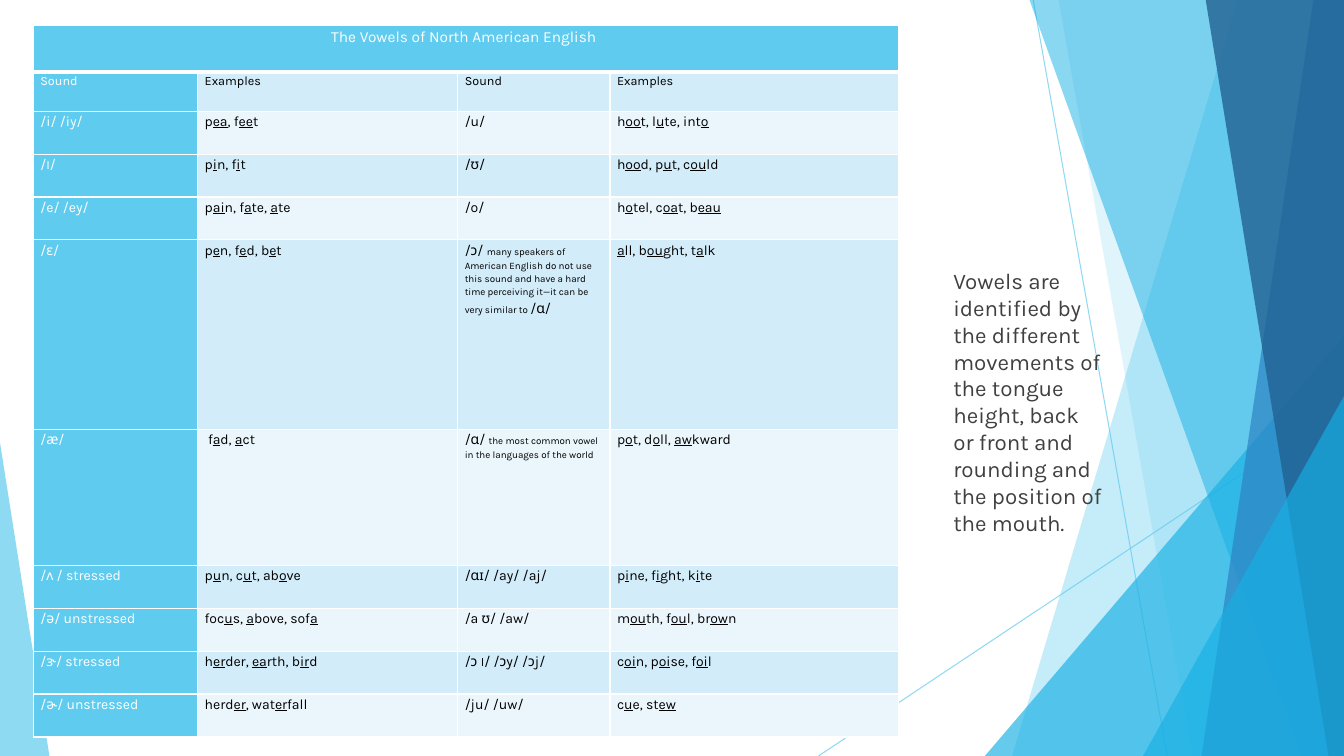
import itertools

import pptx
import pptx.dml.color
import pptx.enum.shapes
import pptx.enum.text
import pptx.oxml
import pptx.oxml.ns
import pptx.util

RGBColor = pptx.dml.color.RGBColor
Inches = pptx.util.Inches
Pt = pptx.util.Pt

WHITE = RGBColor(0xFF, 0xFF, 0xFF)
BLACK = RGBColor(0x00, 0x00, 0x00)
GREY = RGBColor(0x40, 0x40, 0x40)
SKY = RGBColor(0x5F, 0xCB, 0xEF)
CYAN = RGBColor(0x17, 0xB0, 0xE4)
BLUE = RGBColor(0x2E, 0x83, 0xC3)
NAVY = RGBColor(0x22, 0x62, 0x92)
BAND_DARK = RGBColor(0xD2, 0xEC, 0xF9)
BAND_LIGHT = RGBColor(0xEA, 0xF6, 0xFC)

FONT = "Karla"
SLIDE_WIDTH = Inches(13.33)
SLIDE_HEIGHT = Inches(7.5)
BLEED = -0.11  # facets start just above the slide

# Inline marks: _underlined_, ~small letter~, ^side note^
MARKS = {"_": {"underline": True}, "~": {"size": 9}, "^": {"size": 7}}

TITLE = "The Vowels of North American English "
VOWELS = [
    ("Sound", "Examples", "Sound", "Examples"),
    ("/i/ /iy/", "p_ea_, f_ee_t", "/u/", "h_oo_t, l_u_te, int_o_"),
    ("/~I~/", "p_i_n, f_i_t", "/ʊ/", "h_oo_d, p_u_t, c_ou_ld"),
    ("/e/ /ey/", "p_ai_n, f_a_te, _a_te", "/o/", "h_o_tel, c_oa_t, b_eau_"),
    ("/ɛ/", "p_e_n, f_e_d, b_e_t",
     "/ɔ/ ^many speakers of American English do not use this sound and have "
     "a hard time perceiving it—it can be very similar to ^/ɑ/",
     "_a_ll, b_ou_ght, t_a_lk"),
    ("/ӕ/", " f_a_d, _a_ct",
     "/ɑ/ ^the most common vowel in the languages of the world^",
     "p_o_t, d_o_ll, _aw_kward"),
    ("/ʌ / stressed", "p_u_n, c_u_t, ab_o_ve", "/ɑɪ/ /ay/ /aj/",
     "p_i_ne, f_i_ght, k_i_te"),
    ("/ə/ unstressed", "foc_u_s, _a_bove, sof_a_", "/a ʊ/ /aw/",
     "m_ou_th, f_ou_l, br_ow_n"),
    ("/ɝ/ stressed", "h_er_der, _ea_rth, b_ir_d", "/ɔ ~I~/ /ɔy/ /ɔj/",
     "c_oi_n, p_oi_se, f_oi_l"),
    ("/ɚ/ unstressed", "herd_er_, wat_er_fall", "/ju/ /uw/", "c_u_e, st_ew_"),
]
NOTE = ("Vowels are identified by the different movements of the tongue height, "
        "back or front and rounding and the position of the mouth.")

# Percentages of the slide's width and height
COLUMN_WIDTHS = [12.23, 19.35, 11.33, 21.45]
ROW_HEIGHTS = [6.13, 5.2] + [5.67] * 3 + [25.07, 18] + [5.67] * 4


def across(percent):
    return round(SLIDE_WIDTH * percent / 100)


def down(percent):
    return round(SLIDE_HEIGHT * percent / 100)


def frame(left, top, width, height):
    return across(left), down(top), across(width), down(height)


def set_alpha(properties, percent):
    """Make the colour inside a fill or line see-through."""
    colour = next(properties.iter(pptx.oxml.ns.qn("a:srgbClr")))
    alpha = pptx.oxml.parse_xml(
        f'<a:alpha {pptx.oxml.ns.nsdecls("a")} val="{percent * 1000}"/>')
    colour.append(alpha)


def paint(shape, colour, opacity):
    shape.shadow.inherit = False
    shape.fill.solid()
    shape.fill.fore_color.rgb = colour
    set_alpha(shape.fill._xPr, opacity)
    shape.line.fill.background()


def add_ray(page, start, end):
    ray = page.shapes.add_connector(
        pptx.enum.shapes.MSO_CONNECTOR.STRAIGHT,
        across(start[0]), down(start[1]), across(end[0]), down(end[1]))
    ray.line.color.rgb = SKY
    ray.line.width = Pt(0.75)
    properties = ray._element.spPr
    set_alpha(properties, 70)
    properties.append(pptx.oxml.parse_xml(
        f'<a:effectLst {pptx.oxml.ns.nsdecls("a")}/>'))


def add_facet(page, top_left, bottom_left, colour, opacity):
    """Draw a panel with a slanted left side, reaching the right edge."""
    builder = page.shapes.build_freeform(across(top_left), down(BLEED))
    builder.add_line_segments([
        (across(100), down(BLEED)),
        (across(100), down(100)),
        (across(bottom_left), down(100))])
    paint(builder.convert_to_shape(), colour, opacity)


def add_corner(page, left, top, width, peak, colour, opacity):
    """Draw a triangle standing on the bottom edge."""
    corner = page.shapes.add_shape(
        pptx.enum.shapes.MSO_SHAPE.ISOSCELES_TRIANGLE,
        *frame(left, top, width, 100 - top))
    corner.adjustments[0] = peak
    paint(corner, colour, opacity)


def write(para, text, size, colour):
    """Fill a paragraph, turning inline marks into formatted spans."""
    active = {}
    pieces = itertools.groupby(text, key=lambda letter: letter in MARKS)
    for is_mark, letters in pieces:
        if is_mark:
            for mark in letters:
                if active.pop(mark, None) is None:
                    active[mark] = MARKS[mark]
            continue
        span = para.add_run()
        span.text = "".join(letters)
        look = {"size": size}
        for change in active.values():
            look.update(change)
        span.font.name = FONT
        span.font.size = Pt(look["size"])
        span.font.underline = look.get("underline")
        span.font.color.rgb = colour


def set_borders(cell, bottom=1):
    properties = cell._tc.get_or_add_tcPr()
    for side, width in (("L", 1), ("R", 1), ("T", 1), ("B", bottom)):
        properties.append(pptx.oxml.parse_xml(
            f'<a:ln{side} {pptx.oxml.ns.nsdecls("a")} w="{Pt(width)}">'
            f'<a:solidFill><a:srgbClr val="{WHITE}"/></a:solidFill></a:ln{side}>'))


def fill_cell(cell, text, fill, size=10, colour=BLACK, align=None, bottom=1):
    cell.margin_left = cell.margin_right = Inches(0.07)
    cell.margin_top = cell.margin_bottom = 0
    set_borders(cell, bottom)
    cell.fill.solid()
    cell.fill.fore_color.rgb = fill
    para = cell.text_frame.paragraphs[0]
    para.line_spacing = 1.15
    para.alignment = align
    write(para, text, size, colour)


def add_vowel_table(page):
    table = page.shapes.add_table(
        len(ROW_HEIGHTS), len(COLUMN_WIDTHS),
        *frame(2.48, 3.4, sum(COLUMN_WIDTHS), sum(ROW_HEIGHTS))).table
    table.first_row = table.horz_banding = False
    for column, width in zip(table.columns, COLUMN_WIDTHS):
        column.width = across(width)
    for row, height in zip(table.rows, ROW_HEIGHTS):
        row.height = down(height)

    # Title across all columns
    table.cell(0, 0).merge(table.cell(0, len(COLUMN_WIDTHS) - 1))
    for column in range(len(COLUMN_WIDTHS)):
        fill_cell(table.cell(0, column), "" if column else TITLE, SKY, size=11,
                  colour=WHITE, align=pptx.enum.text.PP_ALIGN.CENTER, bottom=3)

    # Headings and banded vowel rows
    for row, texts in enumerate(VOWELS, start=1):
        band = BAND_DARK if row % 2 else BAND_LIGHT
        for column, text in enumerate(texts):
            fill_cell(table.cell(row, column), text,
                      fill=band if column else SKY,
                      size=9 if row == 1 else 10,
                      colour=BLACK if column else WHITE)


def add_note(page):
    box = page.shapes.add_textbox(*frame(70.2, 34.67, 12.6, 42.27))
    box.text_frame.word_wrap = True
    para = box.text_frame.paragraphs[0]
    para.space_before = Pt(10)
    write(para, NOTE, size=16, colour=GREY)


def main():
    deck = pptx.Presentation()
    deck.slide_width, deck.slide_height = SLIDE_WIDTH, SLIDE_HEIGHT
    page = deck.slides.add_slide(deck.slide_layouts[6])

    # Faceted backdrop, back to front
    add_ray(page, (76.88, 0), (86.85, 100))
    add_ray(page, (100, 53.73), (60.9, 100))
    add_facet(page, 92.1, 75.3, SKY, 36)
    add_facet(page, 78.75, 88.73, SKY, 20)
    add_corner(page, 73.28, 44.4, 26.72, 1, CYAN, 66)
    add_facet(page, 76.58, 96.83, CYAN, 50)
    add_facet(page, 97.73, 89.4, BLUE, 70)
    add_facet(page, 89.7, 98.85, NAVY, 80)
    add_corner(page, 85.05, 52.4, 14.95, 1, CYAN, 66)
    add_corner(page, 0, 58.53, 3.68, 0, SKY, 70)

    # Content
    add_vowel_table(page)
    add_note(page)
    deck.save("out.pptx")


if __name__ == "__main__":
    main()
